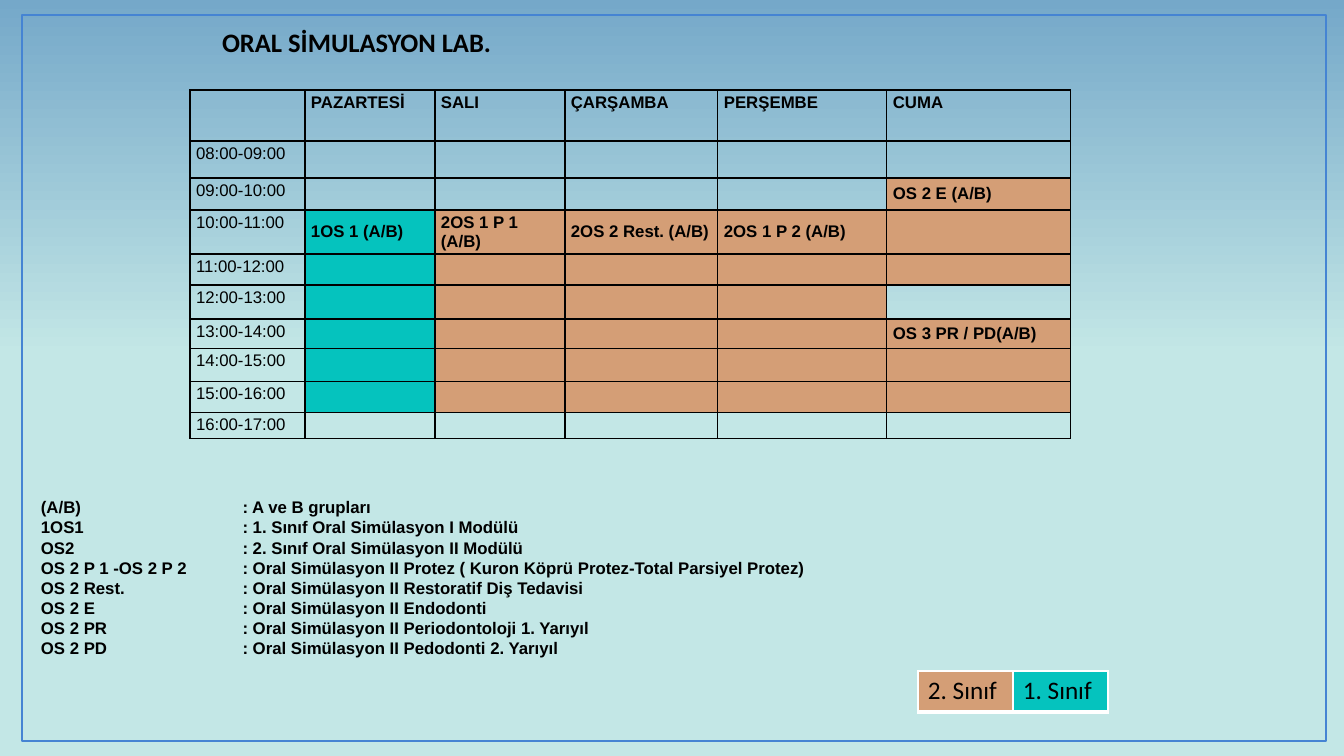
"""Build the weekly timetable slide of the oral simulation lab."""
from lxml import etree
from pptx import Presentation, util as u
from pptx.dml.color import RGBColor
from pptx.enum import shapes, text
from pptx.oxml import ns

PX = u.Inches(1) / 100.8
COLOURS = {"sky": "75A8C9", "mint": "C3E7E6", "frame": "4584D3", "black": "000000",
           "white": "FFFFFF", "first": "05C3BE", "second": "D49E76"}
SMALL = {"name": "Arial", "size": u.Pt(12)}
BOLD = {**SMALL, "bold": True}
LEGEND = {"name": "Calibri", "size": u.Pt(18)}
TITLE = {"name": "Calibri", "size": u.Pt(19), "bold": True}

DAYS = ["PAZARTESİ", "SALI", "ÇARŞAMBA", "PERŞEMBE", "CUMA"]
FIRST_HOUR, LAST_HOUR = 8, 16
COLUMNS = [115, 130, 130, 153, 169, 184]
ROWS = [51, 37, 32, 44, 31, 34, 30, 33, 31, 26]
LESSONS = [
    (1, 10, 16, "first", "1OS 1 (A/B)"),
    (2, 10, 16, "second", "2OS 1 P 1 (A/B)"),
    (3, 10, 16, "second", "2OS 2 Rest. (A/B)"),
    (4, 10, 16, "second", "2OS 1 P 2 (A/B)"),
    (5, 9, 12, "second", "OS 2 E (A/B)"),
    (5, 13, 16, "second", "OS 3 PR / PD(A/B)"),
]
ABBREVIATIONS = [
    ("(A/B)", "A ve B grupları"),
    ("1OS1", "1. Sınıf Oral Simülasyon I Modülü"),
    ("OS2", "2. Sınıf Oral Simülasyon II Modülü"),
    ("OS 2 P 1 -OS 2 P 2", "Oral Simülasyon II Protez ( Kuron Köprü Protez-Total Parsiyel Protez)"),
    ("OS 2 Rest.", "Oral Simülasyon II Restoratif Diş Tedavisi"),
    ("OS 2 E", "Oral Simülasyon II Endodonti"),
    ("OS 2 PR", "Oral Simülasyon II Periodontoloji 1. Yarıyıl"),
    ("OS 2 PD", "Oral Simülasyon II Pedodonti 2. Yarıyıl"),
]


def px(*lengths):
    return [u.Emu(round(length * PX)) for length in lengths]


def colour(name):
    return RGBColor.from_string(COLOURS[name])


def set_values(target, values):
    for name, value in values.items():
        setattr(target, name, value)


def write(para, words, font):
    span = para.add_run()
    span.text = words
    set_values(span.font, font)
    span.font.color.rgb = colour("black")


def paint_background(page):
    fill = page.background.fill
    fill.gradient()
    fill.gradient_angle = 90
    for stop, position, name in zip(fill.gradient_stops, (0.53, 1), ("mint", "sky")):
        stop.position = position
        stop.color.rgb = colour(name)


def add_frame(page):
    frame = page.shapes.add_shape(shapes.MSO_SHAPE.RECTANGLE, *px(22, 15, 1304, 726))
    frame.shadow.inherit = False
    frame.fill.background()
    frame.line.color.rgb = colour("frame")
    frame.line.width = u.Pt(1.5)


def add_title(page, words):
    title = page.shapes.title
    set_values(title, dict(zip(("left", "top", "width", "height"), px(212, 21, 397, 42))))
    set_values(title.text_frame, {"word_wrap": True, "vertical_anchor": text.MSO_ANCHOR.TOP,
                                  "auto_size": text.MSO_AUTO_SIZE.SHAPE_TO_FIT_TEXT})
    para = title.text_frame.paragraphs[0]
    para.alignment = text.PP_ALIGN.LEFT
    write(para, words, TITLE)


def add_borders(cell, name, widths):
    properties = cell._tc.get_or_add_tcPr()
    for side, width in zip("LRTB", widths):
        line = etree.SubElement(properties, ns.qn(f"a:ln{side}"), w=str(u.Pt(width)))
        solid = etree.SubElement(line, ns.qn("a:solidFill"))
        etree.SubElement(solid, ns.qn("a:srgbClr"), val=COLOURS[name])


def add_table(page, left, top, columns, rows, margins, border, widths):
    box = page.shapes.add_table(len(rows), len(columns),
                                *px(left, top, sum(columns), sum(rows)))
    table = box.table
    set_values(table, {"first_row": False, "horz_banding": False})
    for column, width in zip(table.columns, px(*columns)):
        column.width = width
    for row, height in zip(table.rows, px(*rows)):
        row.height = height
    sides = ("margin_left", "margin_right", "margin_top", "margin_bottom")
    for cell in table.iter_cells():
        set_values(cell, dict(zip(sides, px(*margins))))
        add_borders(cell, border, widths)
        cell.fill.background()
        cell.text_frame.paragraphs[0]._p.get_or_add_endParaRPr().set("sz", "1200")
    return table


def fill_cell(cell, name):
    cell.fill.solid()
    cell.fill.fore_color.rgb = colour(name)


def write_heading(cell, words, font):
    para = cell.text_frame.paragraphs[0]
    para.line_spacing = 1.15
    write(para, words, font)


def add_timetable(page):
    table = add_table(page, 190, 90, COLUMNS, ROWS, (6, 6, 0, 0), "black", (1, 1, 1, 1))
    for column, day in enumerate(DAYS, 1):
        write_heading(table.cell(0, column), day, BOLD)
    for row, hour in enumerate(range(FIRST_HOUR, LAST_HOUR + 1), 1):
        write_heading(table.cell(row, 0), f"{hour:02}:00-{hour + 1:02}:00", SMALL)
    for column, start, end, year, lesson in LESSONS:
        first_row = start - FIRST_HOUR + 1
        for row in range(first_row, first_row + end - start):
            fill_cell(table.cell(row, column), year)
        cell = table.cell(first_row, column)
        cell.vertical_anchor = text.MSO_ANCHOR.MIDDLE
        write(cell.text_frame.paragraphs[0], lesson, BOLD)


def add_year_legend(page):
    table = add_table(page, 918, 671, [95, 95], [41], (10, 10, 5, 5), "white", (1, 1, 1, 3))
    for cell, words, year in zip(table.iter_cells(), ("2. Sınıf", "1. Sınıf"),
                                 ("second", "first")):
        fill_cell(cell, year)
        write(cell.text_frame.paragraphs[0], words, LEGEND)


def add_abbreviations(page):
    frame = page.shapes.add_textbox(*px(31, 492, 815, 173)).text_frame
    set_values(frame, {"word_wrap": True, "auto_size": text.MSO_AUTO_SIZE.SHAPE_TO_FIT_TEXT})
    for index, (short, meaning) in enumerate(ABBREVIATIONS):
        para = frame.add_paragraph() if index else frame.paragraphs[0]
        tabs = etree.SubElement(para._p.get_or_add_pPr(), ns.qn("a:tabLst"))
        etree.SubElement(tabs, ns.qn("a:tab"), pos=str(u.Inches(2)), algn="l")
        write(para, f"{short}\t: {meaning}", BOLD)


def main():
    deck = Presentation()
    deck.slide_width, deck.slide_height = px(1344, 756)
    page = deck.slides.add_slide(deck.slide_layouts.get_by_name("Title Only"))
    paint_background(page)
    add_frame(page)
    add_timetable(page)
    add_title(page, "ORAL SİMULASYON LAB.")
    add_year_legend(page)
    add_abbreviations(page)
    deck.save("out.pptx")


if __name__ == "__main__":
    main()
